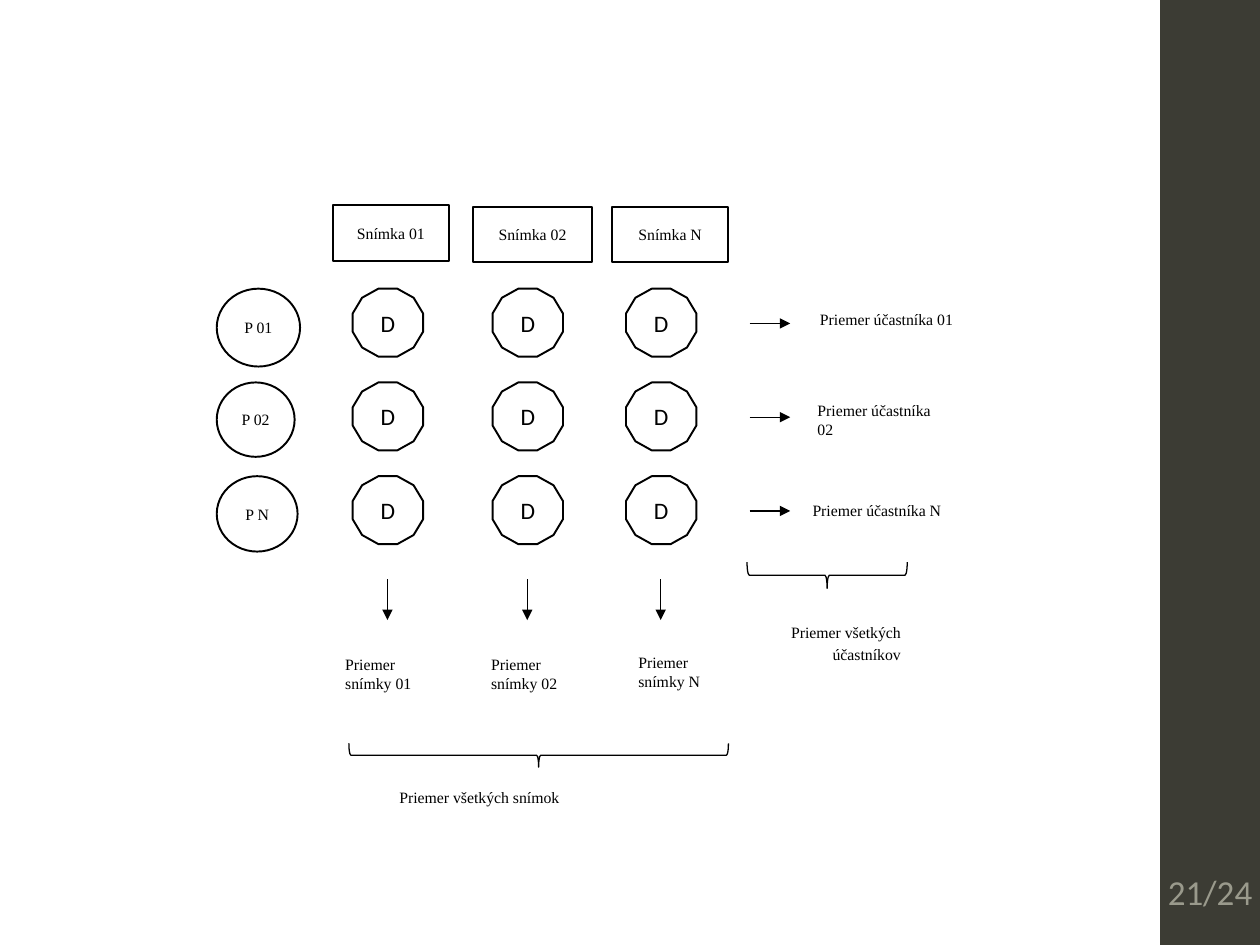
from dataclasses import dataclass

from lxml.etree import SubElement
from pptx import Presentation
from pptx.dml.color import RGBColor
from pptx.enum.shapes import MSO_CONNECTOR, MSO_SHAPE
from pptx.enum.text import MSO_ANCHOR, PP_ALIGN
from pptx.oxml.ns import qn
from pptx.util import Cm, Pt


@dataclass(frozen=True)
class Theme:
    ink: RGBColor = RGBColor(0, 0, 0)
    paper: RGBColor = RGBColor(255, 255, 255)
    bar: RGBColor = RGBColor.from_string("3C3C34")
    muted: RGBColor = RGBColor.from_string("9A9A8C")
    serif: str = "Times New Roman"
    sans: str = "Calibri"
    small: Pt = Pt(9)
    mark: Pt = Pt(13.5)
    page: Pt = Pt(20)
    thick: Pt = Pt(1.1)
    thin: Pt = Pt(0.75)


THEME = Theme()
SMALL = {"name": THEME.serif, "size": THEME.small}
MARK = {"name": THEME.sans, "size": THEME.mark}
PAGE = {"name": THEME.sans, "size": THEME.page}
MID = {"vertical_anchor": MSO_ANCHOR.MIDDLE}
TIGHT = {
    "margin_left": Cm(0.18), "margin_right": Cm(0.18),
    "margin_top": Cm(0.1), "margin_bottom": Cm(0.1),
}
SLIM = {"margin_left": Cm(0.08), "margin_right": Cm(0.08)}
CENTER = {"alignment": PP_ALIGN.CENTER}
LOOSE = {"line_spacing": 1.2, "space_after": Pt(4.5)}

TOP, STEP = 5.82, 1.89
HALF = 0.7

COLS = [
    ("01", 7.11, (6.71, 4.14, 2.34, 1.12), (6.71, 13.08, 2.41, 1.57)),
    ("02", 9.93, (9.53, 4.17, 2.41, 1.12), (9.65, 13.08, 2.46, 1.57)),
    ("N", 12.62, (12.34, 4.17, 2.34, 1.12), (12.62, 13.03, 2.44, 1.5)),
]
ROWS = [
    ("01", (1.68, 1.57), (16.28, 6.12, 3.23, 1.19)),
    ("02", (1.57, 1.5), (16.23, 7.95, 3.12, 1.24)),
    ("N", (1.63, 1.52), (16.13, 9.96, 3.35, 1.09)),
]


def apply(item, values):
    for key, value in values.items():
        setattr(item, key, value)


def write(shape, text, font, frame, para, color=THEME.ink):
    apply(shape.text_frame, {"word_wrap": True, **frame})
    line = shape.text_frame.paragraphs[0]
    apply(line, para)
    run = line.add_run()
    run.text = text
    apply(run.font, font)
    run.font.color.rgb = color


def form(slide, kind, box, fill=None, width=None):
    shape = slide.shapes.add_shape(kind, *map(Cm, box))
    shape.shadow.inherit = False
    if fill is None:
        shape.fill.background()
    else:
        shape.fill.solid()
        shape.fill.fore_color.rgb = fill
    if width is None:
        shape.line.fill.background()
    else:
        shape.line.color.rgb = THEME.ink
        shape.line.width = width
    return shape


def node(slide, kind, box, text, font):
    shape = form(slide, kind, box, THEME.paper, THEME.thick)
    write(shape, text, font, {**MID, **TIGHT}, CENTER)


def label(slide, box, text, font=SMALL, frame={}, para={}, color=THEME.ink):
    shape = slide.shapes.add_textbox(*map(Cm, box))
    write(shape, text, font, frame, para, color)


def arrow(slide, *ends):
    line = slide.shapes.add_connector(MSO_CONNECTOR.STRAIGHT, *map(Cm, ends))
    line.line.color.rgb = THEME.ink
    line.line.width = THEME.thin
    stroke = line.line._get_or_add_ln()
    SubElement(stroke, qn("a:tailEnd"), type="triangle")
    SubElement(line._element.spPr, qn("a:effectLst"))


def brace(slide, box):
    shape = form(slide, MSO_SHAPE.LEFT_BRACE, box, width=THEME.thin)
    shape.rotation = 270


def main():
    deck = Presentation()
    apply(deck, {"slide_width": Cm(25.4), "slide_height": Cm(19.05)})
    slide = deck.slides.add_slide(deck.slide_layouts[6])
    form(slide, MSO_SHAPE.RECTANGLE, (23.39, 0, 2.01, 19.05), THEME.bar)

    for name, left, head, foot in COLS:
        node(slide, MSO_SHAPE.RECTANGLE, head, f"Snímka {name}", SMALL)
        for row in range(len(ROWS)):
            box = (left, TOP + row * STEP, 1.42, 1.37)
            node(slide, MSO_SHAPE.DODECAGON, box, "D", MARK)
        arrow(slide, left + HALF, 11.68, left + HALF, 12.5)
        label(slide, foot, f"Priemer snímky {name}")

    for row, (name, size, side) in enumerate(ROWS):
        top = TOP + row * STEP
        node(slide, MSO_SHAPE.OVAL, (4.37, top, *size), f"P {name}", SMALL)
        arrow(slide, 15.11, top + HALF, 15.93, top + HALF)
        label(slide, side, f"Priemer účastníka {name}")

    brace(slide, (10.62, 11.4, 0.48, 7.65))
    label(slide, (7.87, 15.7, 6.02, 0.69), "Priemer všetkých snímok",
          frame=TIGHT, para=LOOSE)
    brace(slide, (16.41, 9.98, 0.53, 3.23))
    label(slide, (14.71, 12.37, 3.63, 1.47), "Priemer všetkých účastníkov",
          frame=TIGHT, para={**LOOSE, "alignment": PP_ALIGN.RIGHT})
    label(slide, (23.44, 17.15, 1.91, 1.65), "21/24", PAGE,
          {**MID, **SLIM}, CENTER, THEME.muted)
    deck.save("out.pptx")


if __name__ == "__main__":
    main()
